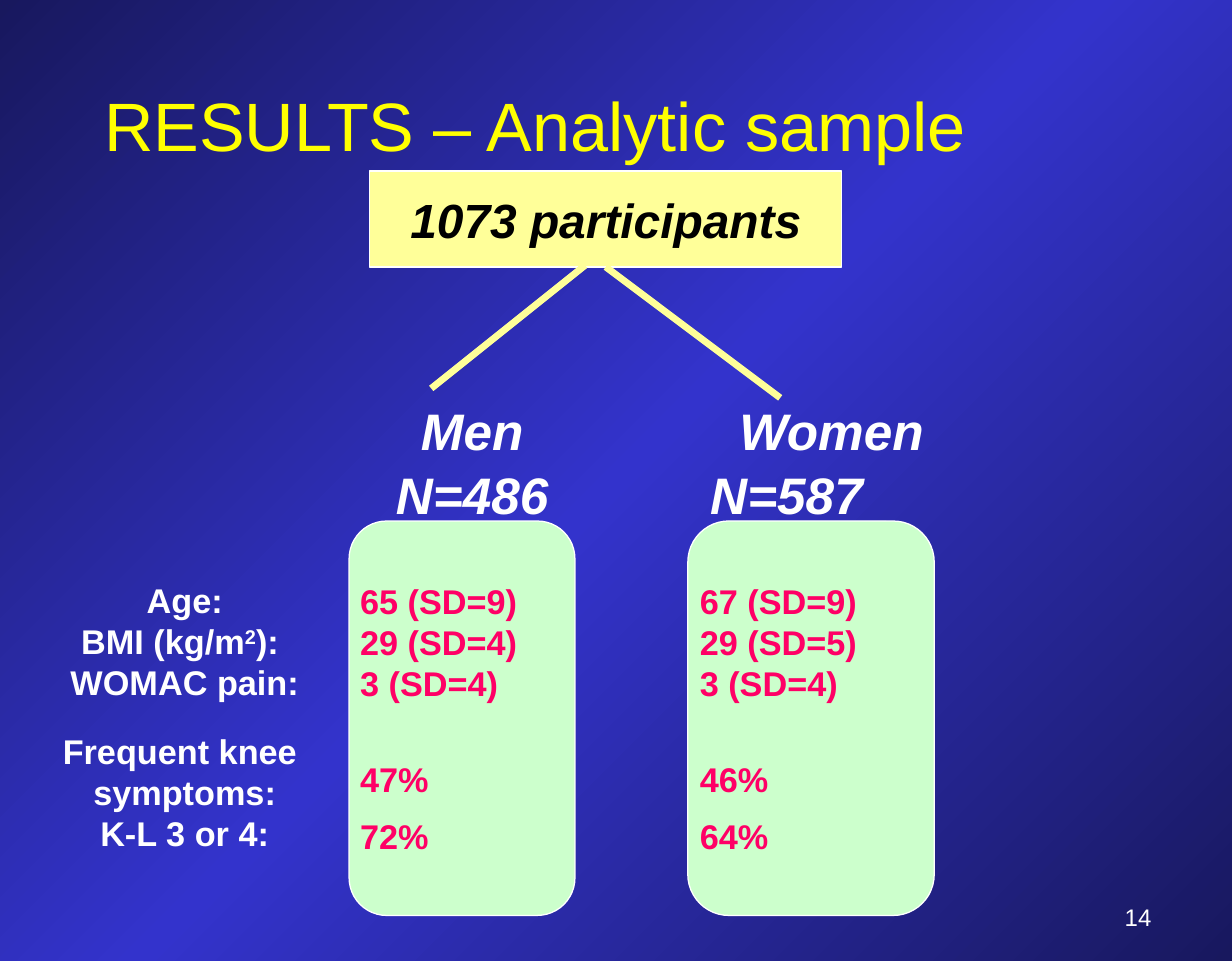
"""Build the analytic sample slide: participants split into men and women."""
from copy import deepcopy
from pptx import Presentation
from pptx import util as u
from pptx.dml.color import RGBColor
from pptx.enum import shapes, text
from pptx.oxml.ns import qn
from lxml import etree

Pt = u.Pt
COLORS = {"edge": "18185E", "middle": "3333CC", "title": "FFFF00", "root": "FFFF99",
          "card": "CCFFCC", "value": "FF0066", "white": "FFFFFF", "black": "000000"}
LEFT, CENTER, RIGHT = text.PP_ALIGN.LEFT, text.PP_ALIGN.CENTER, text.PP_ALIGN.RIGHT
TOP, MIDDLE, BOTTOM = text.MSO_ANCHOR.TOP, text.MSO_ANCHOR.MIDDLE, text.MSO_ANCHOR.BOTTOM


def rgb(name):
    return RGBColor.from_string(COLORS[name])


def write(box, lines, size, color, align=LEFT, anchor=TOP, bold=False, italic=False, wrap=True):
    frame = box.text_frame
    frame.word_wrap = wrap
    frame.vertical_anchor = anchor
    for index, (line, gap) in enumerate(lines):
        para = frame.paragraphs[0] if index == 0 else frame.add_paragraph()
        para.text = line
        para.alignment = align
        if gap:
            para.space_before = Pt(gap)
        font = para.font
        font.name, font.size, font.bold, font.italic = "Arial", Pt(size), bold, italic
        font.color.rgb = rgb(color)
    return frame


deck = Presentation()
deck.slide_width, deck.slide_height = Pt(720), Pt(561.6)
page = deck.slides.add_slide(deck.slide_layouts[6])

backdrop = page.background.fill
backdrop.gradient()
backdrop.gradient_angle = 315
stop_list = page.element.find(".//" + qn("a:gsLst"))
stop_list.append(deepcopy(stop_list[0]))
for stop, name, position in zip(backdrop.gradient_stops, ("edge", "middle", "edge"), (0, 0.5, 1)):
    stop.color.rgb = rgb(name)
    stop.position = position

title = page.shapes.add_textbox(Pt(54), Pt(6.5), Pt(612), Pt(93.6))
write(title, [("RESULTS – Analytic sample", 0)], 40, "title", anchor=BOTTOM)

root = page.shapes.add_shape(shapes.MSO_SHAPE.RECTANGLE, Pt(216), Pt(100), Pt(276), Pt(56))
root.shadow.inherit = False
root.fill.solid()
root.fill.fore_color.rgb = rgb("root")
root.line.color.rgb = rgb("white")
root.line.width = Pt(0.75)
write(root, [("1073 participants", 0)], 28, "black", CENTER, MIDDLE, True, True, False)

groups = [
    ("Men", "N=486", CENTER, 180, 192, 204, 132,
     ("65 (SD=9)", "29 (SD=4)", "3 (SD=4)", "47%", "72%")),
    ("Women", "N=587", LEFT, 408, 156, 402, 144,
     ("67 (SD=9)", "29 (SD=5)", "3 (SD=4)", "46%", "64%")),
]
for name, count, count_align, head_left, head_width, card_left, card_width, values in groups:
    heading = page.shapes.add_textbox(Pt(head_left), Pt(229.5), Pt(head_width), Pt(80))
    frame = write(heading, [(name, 0), (count, 1.7)], 30, "white", CENTER, TOP, True, True)
    frame.paragraphs[1].alignment = count_align

    card = page.shapes.add_shape(shapes.MSO_SHAPE.ROUNDED_RECTANGLE,
                                 Pt(card_left), Pt(304.5), Pt(card_width), Pt(230.5))
    card.shadow.inherit = False
    card.fill.solid()
    card.fill.fore_color.rgb = rgb("card")
    card.line.color.rgb = rgb("white")
    card.line.width = Pt(0.75)
    frame = write(card, zip(values, (0, 0, 0, 32.2, 9.2)), 20, "value", LEFT, MIDDLE, True)
    frame.margin_left = frame.margin_right = 0

labels = page.shapes.add_shape(shapes.MSO_SHAPE.ROUNDED_RECTANGLE,
                               Pt(30), Pt(281), Pt(156), Pt(252))
labels.shadow.inherit = False
labels.fill.background()
labels.line.fill.background()
frame = write(labels, [("Age:", 0), ("BMI (kg/m", 0), ("WOMAC pain:", 0), ("Frequent knee ", 16.1),
                       ("symptoms:", 0), ("K-L 3 or 4:", 0)],
              20, "white", CENTER, MIDDLE, True, wrap=False)
frame.margin_left = frame.margin_right = 0
frame.margin_top = Pt(26.6)
bmi = frame.paragraphs[1]
span = bmi.add_run()
span.text = "2"
span.font._element.set("baseline", "30000")
bmi.add_run().text = "): "

for start, end in (((342, 155), (252, 227)), ((354, 156), (456, 232.5))):
    branch = page.shapes.add_connector(shapes.MSO_CONNECTOR.STRAIGHT,
                                       *(Pt(value) for value in start + end))
    branch.line.color.rgb = rgb("root")
    branch.line.width = Pt(4)
    etree.SubElement(branch.element.spPr, qn("a:effectLst"))
branch.begin_connect(root, 2)

number = page.shapes.add_textbox(Pt(530), Pt(510.5), Pt(150), Pt(37.5))
write(number, [("14", 0)], 14, "white", RIGHT, BOTTOM)

deck.save("out.pptx")
